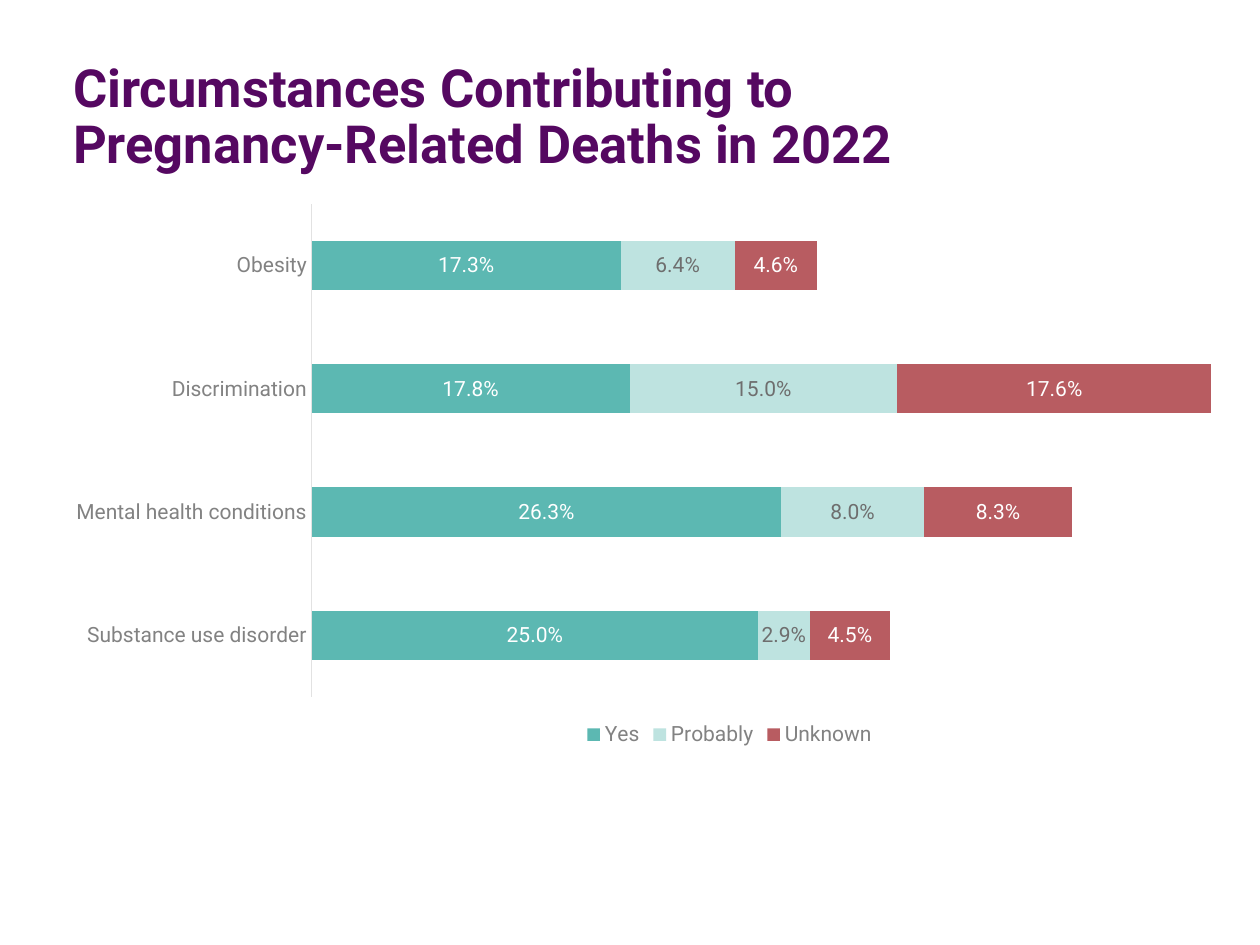
from dataclasses import dataclass

from pptx import Presentation
from pptx.chart.data import CategoryChartData
from pptx.dml.color import RGBColor
from pptx.enum.chart import (XL_CHART_TYPE, XL_LABEL_POSITION,
                             XL_LEGEND_POSITION, XL_TICK_LABEL_POSITION,
                             XL_TICK_MARK)
from pptx.enum.text import MSO_ANCHOR, MSO_AUTO_SIZE, PP_ALIGN
from pptx.util import Inches, Pt


@dataclass(frozen=True)
class Theme:
    font: str = "Roboto"
    title_size: float = 30
    chart_size: float = 10
    label_size: float = 12
    title: str = "550861"
    body: str = "3E3E3E"
    muted: str = "828282"
    axis: str = "E2E2E2"
    on_dark: str = "FFFFFF"
    on_light: str = "6E6E6E"
    yes: str = "5CB8B2"
    probably: str = "BEE3E0"
    unknown: str = "B85C61"


THEME = Theme()
CIRCUMSTANCES = ["Substance use disorder", "Mental health conditions",
                 "Discrimination", "Obesity"]
# Answer, shares by circumstance, bar colour, label colour
ANSWERS = [
    ("Yes", (0.25, 0.263, 0.178, 0.173), THEME.yes, THEME.on_dark),
    ("Probably", (0.029, 0.08, 0.15, 0.064), THEME.probably, THEME.on_light),
    ("Unknown", (0.045, 0.083, 0.176, 0.046), THEME.unknown, THEME.on_dark),
]
PERCENT = "0.0%"


def place(shape, left, top, width, height):
    shape.left, shape.top = Inches(left), Inches(top)
    shape.width, shape.height = Inches(width), Inches(height)


class SlideBuilder:
    def __init__(self, slide, theme):
        self.slide = slide
        self.theme = theme

    def style_font(self, font, size, color, bold=False):
        font.name = self.theme.font
        font.size = Pt(size)
        font.bold = bold
        font.color.rgb = RGBColor.from_string(color)

    def set_text(self, frame, text, *, size, color, bold=False,
                 align=PP_ALIGN.LEFT, line_spacing=1.0):
        frame.text = text
        paragraph = frame.paragraphs[0]
        paragraph.alignment = align
        paragraph.line_spacing = line_spacing
        self.style_font(paragraph.runs[0].font, size, color, bold)

    def title(self, text, *box):
        heading = self.slide.shapes.title
        place(heading, *box)
        frame = heading.text_frame
        frame.auto_size = MSO_AUTO_SIZE.NONE
        frame.word_wrap = True
        frame.vertical_anchor = MSO_ANCHOR.MIDDLE
        frame.margin_left = 0
        frame.margin_top = frame.margin_right = frame.margin_bottom = Inches(0.1)
        self.set_text(frame, text, size=self.theme.title_size,
                      color=self.theme.title, bold=True, line_spacing=0.9)

    def stacked_bars(self, categories, answers, *box):
        theme = self.theme
        shares = CategoryChartData(number_format=PERCENT)
        shares.categories = categories
        for name, values, _, _ in answers:
            shares.add_series(name, values)
        chart = self.slide.shapes.add_chart(
            XL_CHART_TYPE.BAR_STACKED, *map(Inches, box), shares).chart
        chart.has_title = False
        self.style_font(chart.font, theme.chart_size, theme.body)

        plot = chart.plots[0]
        plot.gap_width, plot.overlap = 150, 100
        plot.vary_by_categories = False
        for series, (_, _, fill, label_color) in zip(plot.series, answers):
            self.bar_series(series, fill, label_color)
        self.axes(chart)

        chart.has_legend = True
        chart.legend.position = XL_LEGEND_POSITION.BOTTOM
        chart.legend.include_in_layout = False
        self.style_font(chart.legend.font, theme.label_size, theme.muted)

    def bar_series(self, series, fill, label_color):
        series.invert_if_negative = False
        series.format.fill.solid()
        series.format.fill.fore_color.rgb = RGBColor.from_string(fill)
        labels = series.data_labels
        labels.show_value = True
        labels.position = XL_LABEL_POSITION.CENTER
        labels.number_format = PERCENT
        labels.number_format_is_linked = False
        self.style_font(labels.font, self.theme.label_size, label_color)

    def axes(self, chart):
        circumstances = chart.category_axis
        circumstances.major_tick_mark = XL_TICK_MARK.NONE
        circumstances.minor_tick_mark = XL_TICK_MARK.NONE
        circumstances.tick_label_position = XL_TICK_LABEL_POSITION.NEXT_TO_AXIS
        circumstances.format.line.width = Pt(0.75)
        circumstances.format.line.color.rgb = RGBColor.from_string(self.theme.axis)
        self.style_font(circumstances.tick_labels.font,
                        self.theme.label_size, self.theme.muted)
        share = chart.value_axis
        share.visible = False
        share.has_major_gridlines = False
        share.minimum_scale, share.maximum_scale = 0, 0.6
        share.tick_labels.number_format = PERCENT
        share.tick_labels.number_format_is_linked = False


def main():
    deck = Presentation()
    deck.slide_width, deck.slide_height = Inches(10), Inches(7.5)
    title_only = deck.slide_layouts[5]
    builder = SlideBuilder(deck.slides.add_slide(title_only), THEME)
    builder.title("Circumstances Contributing to Pregnancy-Related Deaths in 2022",
                  0.58, 0.35, 7.17, 1.18)
    builder.stacked_bars(CIRCUMSTANCES, ANSWERS, 0.39, 1.53, 10.8, 4.44)
    deck.save("out.pptx")


if __name__ == "__main__":
    main()
